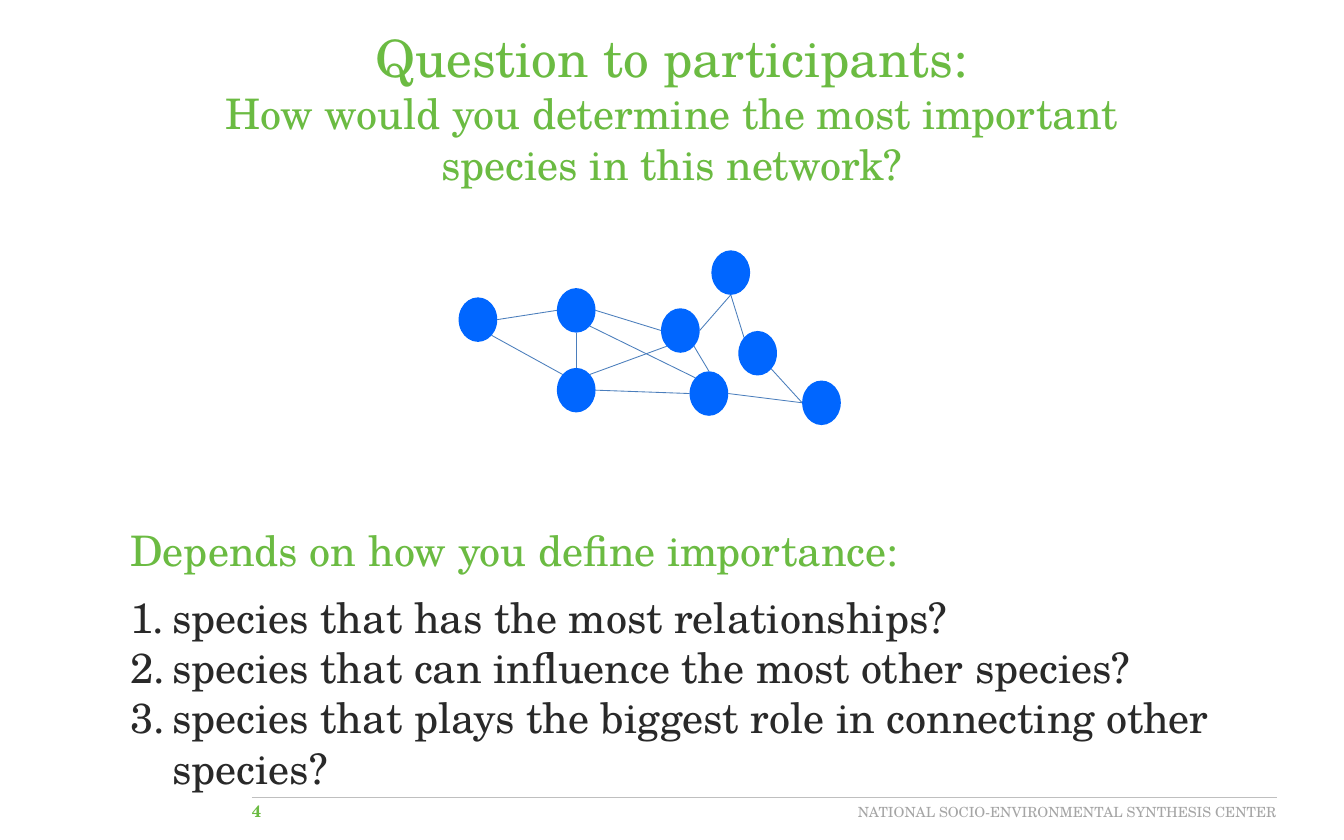
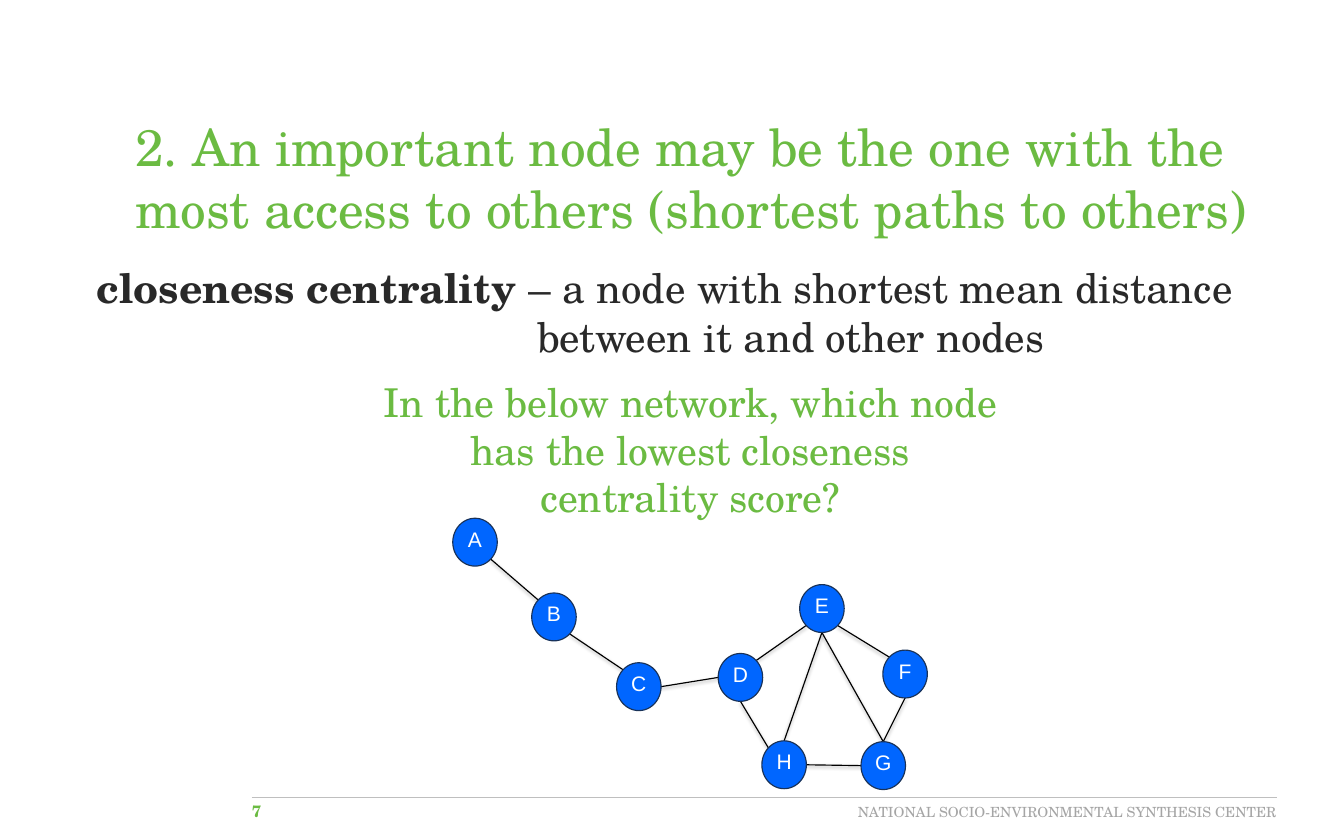
from lxml import etree
from pptx import Presentation
from pptx.dml.color import RGBColor
from pptx.enum.shapes import MSO_CONNECTOR, MSO_SHAPE
from pptx.enum.text import MSO_ANCHOR, MSO_AUTO_SIZE, PP_ALIGN
from pptx.oxml.ns import qn
from pptx.util import Inches, Pt

LEFT, CENTER, RIGHT = PP_ALIGN.LEFT, PP_ALIGN.CENTER, PP_ALIGN.RIGHT
TOP, MIDDLE = MSO_ANCHOR.TOP, MSO_ANCHOR.MIDDLE
FIXED = MSO_AUTO_SIZE.NONE
OVAL = MSO_SHAPE.OVAL
STRAIGHT = MSO_CONNECTOR.STRAIGHT

COLUMNS, ROWS = 16, 10
SERIF, SANS = "TeX Gyre Schola", "Arial"
COLORS = {
    "green": "6BBB42",
    "ink": "292929",
    "footer": "A5A5A5",
    "rule": "BFBFBF",
    "node": "0066FF",
    "node edge": "193258",
    "link": "4B7EBC",
    "black": "000000",
    "white": "FFFFFF",
}
DIAGONAL = 0.5 ** 0.5
SITES = {
    "top": (0, -1),
    "left": (-1, 0),
    "bottom": (0, 1),
    "right": (1, 0),
    "top left": (-DIAGONAL, -DIAGONAL),
    "top right": (DIAGONAL, -DIAGONAL),
    "bottom left": (-DIAGONAL, DIAGONAL),
    "bottom right": (DIAGONAL, DIAGONAL),
}


def color(name):
    return RGBColor.from_string(COLORS[name])


class Slides:
    def __init__(self):
        self.deck = Presentation()
        self.deck.slide_width = Inches(15.99)
        self.deck.slide_height = Inches(9.99)
        self.page = None

    def x(self, columns):
        return round(self.deck.slide_width * columns / COLUMNS)

    def y(self, rows):
        return round(self.deck.slide_height * rows / ROWS)

    def area(self, left, top, width, height):
        return self.x(left), self.y(top), self.x(width), self.y(height)

    def new_page(self, number):
        self.page = self.deck.slides.add_slide(self.deck.slide_layouts[1])
        self.text((3, 9.49, 0.6, 0.3), [number], 14, "green",
                  bold=True, inset=(0, 0.05, 0, 0))
        self.text((10.15, 9.52, 5.05, 0.3),
                  ["NATIONAL SOCIO-ENVIRONMENTAL SYNTHESIS CENTER"],
                  12, "footer", align=RIGHT, inset=(0, 0.05, 0, 0.05))
        self.line((3, 9.49), (15.2, 9.49), "rule", 0.75)

    def text(self, area, lines, size, ink, **style):
        box = self.page.shapes.add_textbox(*self.area(*area))
        return self.set_lines(box, lines, size, ink, **style)

    def placeholder(self, index, area, lines, size, ink, **style):
        box = self.page.placeholders[index]
        box.left, box.top, box.width, box.height = self.area(*area)
        return self.set_lines(box, lines, size, ink, **style)

    def set_lines(self, box, lines, size, ink, align=LEFT, bold=False,
                  font=SERIF, anchor=TOP, inset=(0.1, 0.05, 0.1, 0.05),
                  numbered_from=None):
        frame = box.text_frame
        frame.text = "\n".join(lines)
        frame.word_wrap = True
        frame.auto_size = FIXED
        frame.vertical_anchor = anchor
        (frame.margin_left, frame.margin_top,
         frame.margin_right, frame.margin_bottom) = map(Inches, inset)
        for index, para in enumerate(frame.paragraphs):
            if numbered_from is not None and index >= numbered_from:
                self.number(para)
            else:
                self.indent(para, 0, 0)
                etree.SubElement(para._p.get_or_add_pPr(), qn("a:buNone"))
            para.alignment = align
            para.space_before = Pt(0)
            self.style_spans(para, size, ink, bold, font)
        return frame.paragraphs

    def indent(self, para, left, first):
        props = para._p.get_or_add_pPr()
        props.set("marL", str(Inches(left)))
        props.set("indent", str(Inches(first)))

    def number(self, para):
        self.indent(para, 0.5, -0.5)
        props = para._p.get_or_add_pPr()
        tint = etree.SubElement(props, qn("a:buClr"))
        etree.SubElement(tint, qn("a:srgbClr"), val=COLORS["ink"])
        etree.SubElement(props, qn("a:buAutoNum"), type="arabicPeriod")

    def style_spans(self, para, size, ink, bold=False, font=SERIF):
        for span in para.runs:
            span.font.size = Pt(size)
            span.font.name = font
            span.font.bold = bold
            span.font.color.rgb = color(ink)

    def line(self, start, end, ink, weight, shadow=False):
        link = self.page.shapes.add_connector(
            STRAIGHT, self.x(start[0]), self.y(start[1]),
            self.x(end[0]), self.y(end[1]))
        link.line.color.rgb = color(ink)
        link.line.width = Pt(weight)
        effects = etree.SubElement(link._element.spPr, qn("a:effectLst"))
        if shadow:
            outer = etree.SubElement(
                effects, qn("a:outerShdw"), blurRad=str(Pt(3.1)),
                dist=str(Pt(1.6)), dir="5400000", rotWithShape="0")
            tint = etree.SubElement(outer, qn("a:srgbClr"), val=COLORS["black"])
            etree.SubElement(tint, qn("a:alpha"), val="37000")

    def node(self, left, top, size, edge=None, label=None):
        oval = self.page.shapes.add_shape(OVAL, *self.area(left, top, *size))
        oval.shadow.inherit = False
        oval.fill.solid()
        oval.fill.fore_color.rgb = color("node")
        if edge:
            oval.line.color.rgb = color(edge)
            oval.line.width = Pt(1)
        else:
            oval.line.fill.background()
        if label:
            self.set_lines(oval, [label], 18, "white", align=CENTER, font=SANS,
                           anchor=MIDDLE, inset=(0, 0, 0, 0.08))

    def network(self, nodes, links, size, ink, weight,
                edge=None, labelled=False, shadow=False):
        def site(name, side):
            return [start + length / 2 * (1 + share) for start, length, share
                    in zip(nodes[name], size, SITES[side])]

        for first, first_side, second, second_side in links:
            self.line(site(first, first_side), site(second, second_side),
                      ink, weight, shadow)
        for name, (left, top) in nodes.items():
            self.node(left, top, size, edge, name if labelled else None)


def question_page(slides):
    slides.new_page("4")
    title = slides.placeholder(
        0, (1.37, 0.26, 13.26, 2.05),
        ["Question to participants:",
         "How would you determine the most important",
         "species in this network?"],
        36, "green", align=CENTER)
    slides.style_spans(title[0], 44, "green")
    body = slides.placeholder(
        1, (1.45, 6.19, 13.87, 2.73),
        ["Depends on how you define importance:",
         "species that has the most relationships?",
         "species that can influence the most other species?",
         "species that plays the biggest role in connecting other species?"],
        36, "ink", numbered_from=1)
    slides.style_spans(body[0], 36, "green")
    body[1].space_before = Pt(14)
    species = {
        "A": (5.46, 3.54), "B": (6.63, 3.43), "C": (6.63, 4.38),
        "D": (7.87, 3.67), "E": (8.21, 4.42), "F": (8.47, 2.98),
        "G": (8.79, 3.94), "H": (9.55, 4.53),
    }
    links = [
        ("A", "right", "B", "left"),
        ("A", "bottom right", "C", "top left"),
        ("B", "bottom", "C", "top"),
        ("B", "right", "D", "left"),
        ("B", "bottom right", "E", "top left"),
        ("C", "top right", "D", "bottom left"),
        ("C", "right", "E", "left"),
        ("D", "bottom right", "E", "top"),
        ("D", "right", "F", "bottom"),
        ("F", "bottom", "G", "top left"),
        ("G", "bottom right", "H", "left"),
        ("E", "right", "H", "left"),
    ]
    slides.network(species, links, (0.46, 0.53), "link", 0.75)


def closeness_page(slides):
    slides.new_page("7")
    slides.placeholder(
        0, (1.51, 1.32, 13.7, 1.58),
        ["2. An important node may be the one with the most access to others "
         "(shortest paths to others)"],
        44, "green")
    term, rest = slides.placeholder(
        1, (0, 3.08, 15.83, 1.3),
        ["closeness centrality ", "between it and other nodes"],
        35, "ink", align=CENTER)
    meaning = term.add_run()
    meaning.text = "– a node with shortest mean distance"
    slides.style_spans(term, 35, "ink")
    term.runs[0].font.bold = True
    slides.indent(rest, 3, 0)
    nodes = {
        "A": (5.39, 6.17), "B": (6.33, 7.06), "C": (7.34, 7.89),
        "D": (8.55, 7.78), "E": (9.52, 6.96), "F": (10.51, 7.74),
        "G": (10.25, 8.83), "H": (9.07, 8.82),
    }
    links = [
        ("A", "bottom right", "B", "top left"),
        ("B", "bottom right", "C", "top left"),
        ("C", "right", "D", "left"),
        ("D", "top right", "E", "bottom left"),
        ("D", "bottom", "H", "top left"),
        ("E", "bottom right", "F", "top left"),
        ("E", "bottom", "G", "top"),
        ("E", "bottom", "H", "top"),
        ("F", "bottom", "G", "top"),
        ("H", "right", "G", "left"),
    ]
    slides.network(nodes, links, (0.53, 0.57), "black", 1,
                   edge="node edge", labelled=True, shadow=True)
    slides.text(
        (4.43, 4.45, 7.58, 1.75),
        ["In the below network, which node has the lowest closeness "
         "centrality score?"],
        34, "green", align=CENTER)


def main():
    slides = Slides()
    question_page(slides)
    closeness_page(slides)
    slides.deck.save("out.pptx")


if __name__ == "__main__":
    main()
